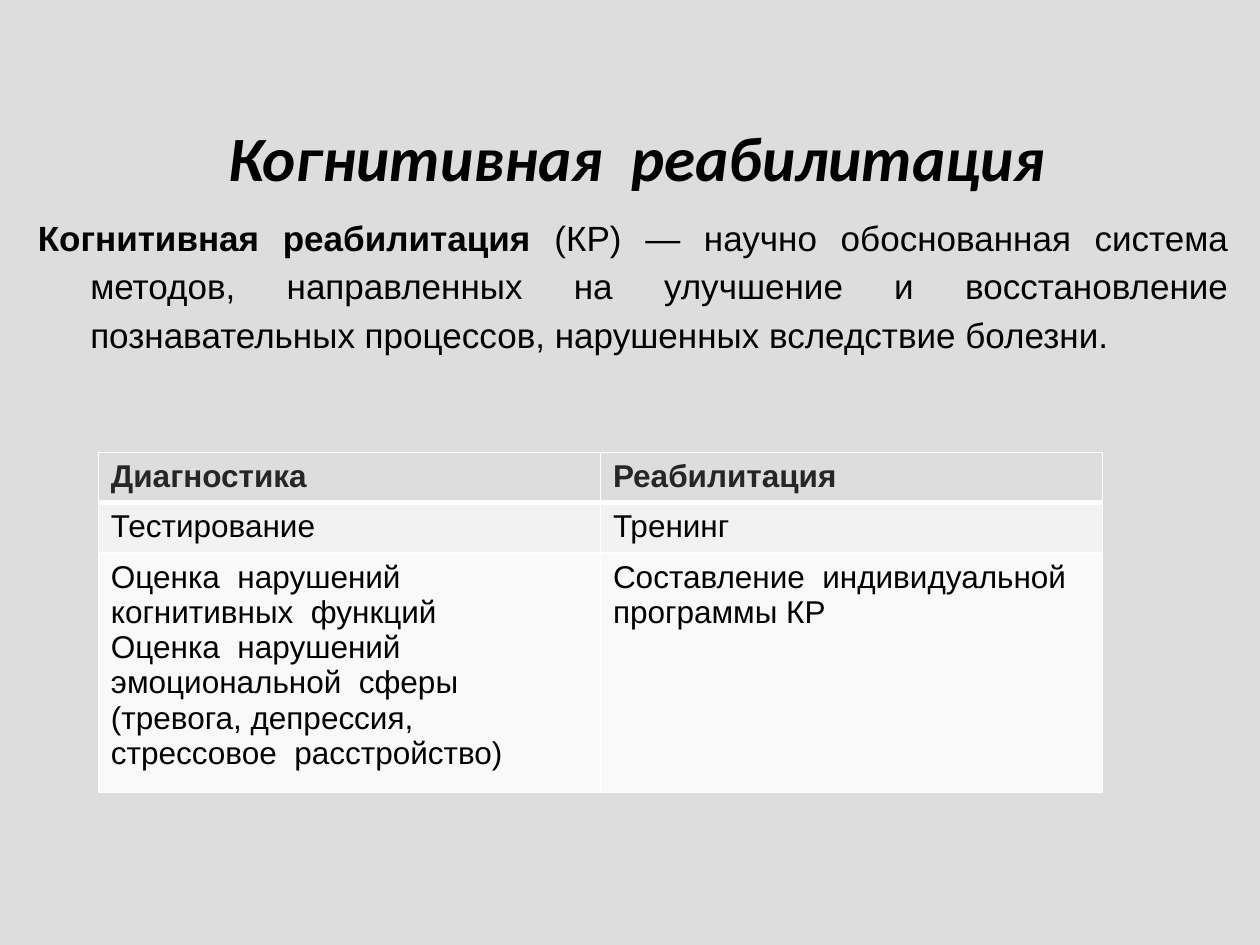
from dataclasses import dataclass

from lxml import etree
from pptx import Presentation
from pptx.dml.color import RGBColor
from pptx.enum.text import MSO_ANCHOR, MSO_AUTO_SIZE, PP_ALIGN
from pptx.oxml.ns import qn
from pptx.util import Pt

CENTER, JUSTIFY, LEFT = PP_ALIGN.CENTER, PP_ALIGN.JUSTIFY, PP_ALIGN.LEFT
BOTTOM, TOP = MSO_ANCHOR.BOTTOM, MSO_ANCHOR.TOP
NO_AUTOFIT = MSO_AUTO_SIZE.NONE


@dataclass(frozen=True)
class Theme:
    background: str = "DDDDDD"
    text: str = "000000"
    header_text: str = "262626"
    border: str = "FFFFFF"
    row_fills: tuple = ("DDDDDD", "F2F2F2", "F9F9F9")
    title_font: str = "Calibri"
    body_font: str = "Arial"
    title_size: int = 36
    body_size: int = 20
    table_size: int = 18


theme = Theme()


def add_run(paragraph, text, size, color=theme.text, font=theme.body_font, bold=False, italic=False):
    run = paragraph.add_run()
    run.text = text
    run.font.name = font
    run.font.size = Pt(size)
    run.font.bold = bold
    run.font.italic = italic
    run.font.color.rgb = RGBColor.from_string(color)


def set_border(cell, side, width):
    """Draw one cell edge; side is the L, R, T or B of the XML name."""
    line = etree.SubElement(cell._tc.get_or_add_tcPr(), qn(f"a:ln{side}"), w=str(Pt(width)))
    fill = etree.SubElement(line, qn("a:solidFill"))
    etree.SubElement(fill, qn("a:srgbClr"), val=theme.border)


presentation = Presentation()
presentation.slide_width, presentation.slide_height = Pt(720), Pt(540)
slide = presentation.slides.add_slide(presentation.slide_layouts[1])
slide.background.fill.solid()
slide.background.fill.fore_color.rgb = RGBColor.from_string(theme.background)
title, body = slide.placeholders

# Title
title.left, title.top, title.width, title.height = Pt(22.3), Pt(65.5), Pt(683.3), Pt(45.4)
frame = title.text_frame
frame.auto_size = NO_AUTOFIT
frame.word_wrap = True
frame.vertical_anchor = BOTTOM
frame.margin_left = frame.margin_right = frame.margin_bottom = 0
frame.margin_top = Pt(3.6)
paragraph = frame.paragraphs[0]
paragraph.alignment = CENTER
add_run(paragraph, "Когнитивная  реабилитация", theme.title_size,
        font=theme.title_font, bold=True, italic=True)

# Definition with a hanging indent
body.left, body.top, body.width, body.height = Pt(14.4), Pt(116.6), Pt(694.8), Pt(113.8)
frame = body.text_frame
frame.auto_size = NO_AUTOFIT
frame.word_wrap = True
frame.vertical_anchor = TOP
paragraph = frame.paragraphs[0]
paragraph.alignment = JUSTIFY
paragraph.line_spacing = 1.15
paragraph.space_before = Pt(0)
properties = paragraph._p.get_or_add_pPr()
properties.set("marL", str(Pt(30)))
properties.set("indent", str(Pt(-30)))
etree.SubElement(properties, qn("a:buNone"))
add_run(paragraph, "Когнитивная реабилитация", theme.body_size, bold=True)
add_run(paragraph, " (КР) — научно обоснованная система методов, направленных на улучшение "
        "и восстановление познавательных процессов, нарушенных вследствие болезни.", theme.body_size)

# Table: each cell is a list of paragraphs
rows = [
    [["Диагностика"], ["Реабилитация"]],
    [["Тестирование"], ["Тренинг"]],
    [["Оценка  нарушений когнитивных  функций",
      "Оценка  нарушений эмоциональной  сферы (тревога, депрессия,  стрессовое  расстройство)"],
     ["Составление  индивидуальной программы КР"]],
]
row_heights = [28.8, 28.8, 136.8]
table = slide.shapes.add_table(len(rows), 2, Pt(56.2), Pt(258.5), Pt(573.8), Pt(sum(row_heights))).table
for column in table.columns:
    column.width = Pt(286.9)

for row_index, (row, height) in enumerate(zip(rows, row_heights)):
    table.rows[row_index].height = Pt(height)
    is_header = row_index == 0
    for column_index, texts in enumerate(row):
        cell = table.cell(row_index, column_index)
        for side in "LRTB":
            header_rule = (is_header and side == "B") or (row_index == 1 and side == "T")
            set_border(cell, side, 3 if header_rule else 1)
        cell.fill.solid()
        cell.fill.fore_color.rgb = RGBColor.from_string(theme.row_fills[row_index])
        for text_index, text in enumerate(texts):
            frame = cell.text_frame
            paragraph = frame.add_paragraph() if text_index else frame.paragraphs[0]
            paragraph.alignment = LEFT
            add_run(paragraph, text, theme.table_size, bold=is_header,
                    color=theme.header_text if is_header else theme.text)

presentation.save("out.pptx")
